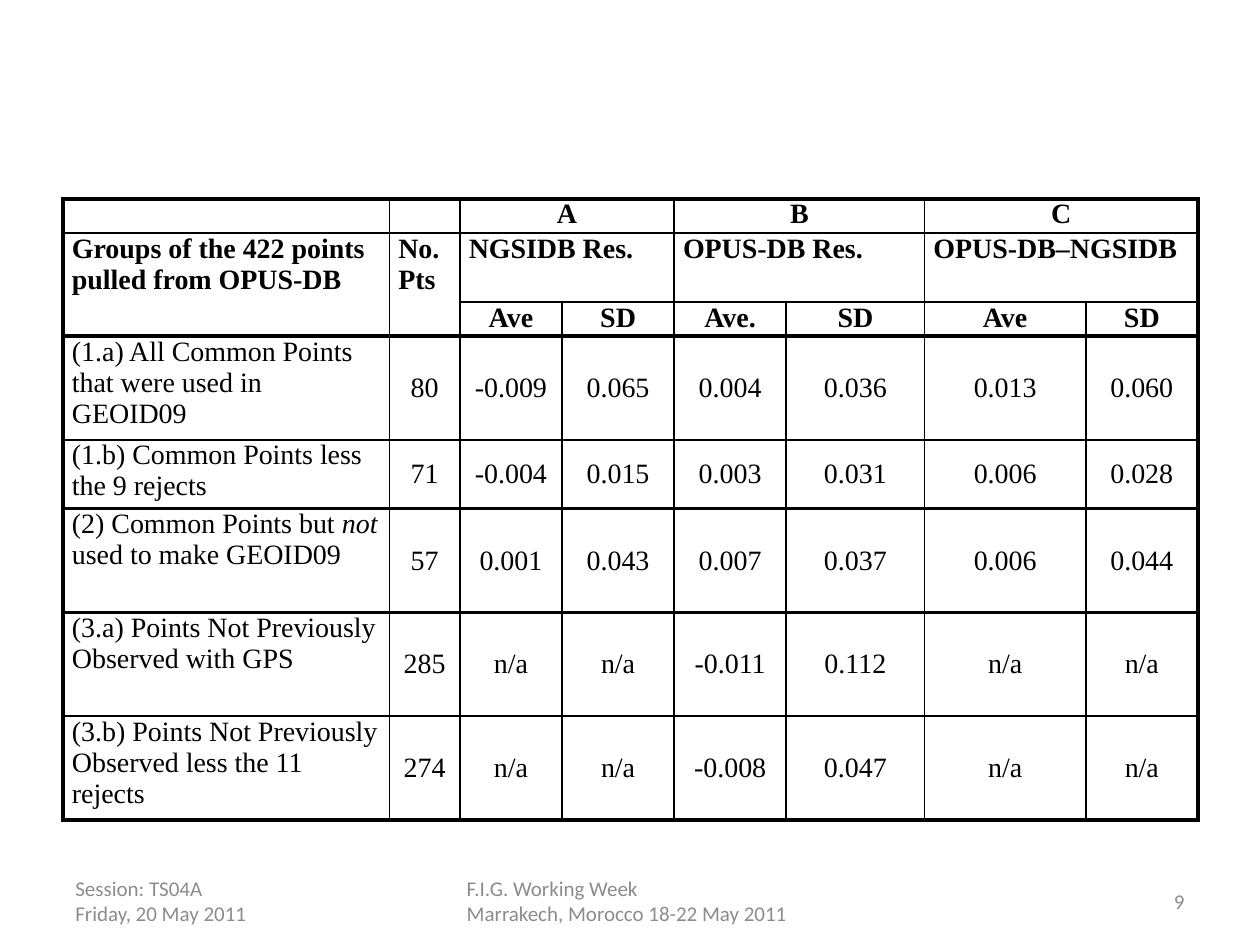
from dataclasses import dataclass

from lxml.etree import SubElement
from pptx import Presentation
from pptx.dml.color import RGBColor
from pptx.enum.text import MSO_ANCHOR as Anchor, PP_ALIGN as Align
from pptx.oxml.ns import qn
from pptx.util import Cm, Pt


@dataclass(frozen=True)
class Theme:
    ink: str = "000000"
    muted: str = "8C8C8C"
    table_font: str = "Times New Roman"
    footer_font: str = "Calibri"
    table_size: int = 16
    footer_size: int = 12
    thin: float = 1
    heavy: float = 2.25


COLUMN_WIDTHS = [6.58, 1.42, 2.06, 2.26, 2.26, 2.79, 3.25, 2.26]
ROW_HEIGHTS = [0.69, 1.39, 0.69, 2.09, 1.39, 2.09, 2.09, 2.09]
HEAVY_COLUMN_EDGES = {0, 8}
HEAVY_ROW_EDGES = {0, 3, 5, 6, 8}
HEADER_ROWS = 3

# First row, first column, last row, last column
MERGES = [(row, column, row, column + 1) for row in (0, 1) for column in (2, 4, 6)]
MERGES += [(1, column, 2, column) for column in (0, 1)]

# A cell is a string, or a list of runs of which every second one is italic
ROWS = [
    ["", "", "A", "", "B", "", "C", ""],
    ["Groups of the 422 points pulled from OPUS-DB", "No. Pts",
     "NGSIDB Res.", "", "OPUS-DB Res.", "", "OPUS-DB–NGSIDB", ""],
    ["", "", "Ave", "SD", "Ave.", "SD", "Ave", "SD"],
    ["(1.a) All Common Points that were used in GEOID09",
     "80", "-0.009", "0.065", "0.004", "0.036", "0.013", "0.060"],
    ["(1.b) Common Points less the 9 rejects",
     "71", "-0.004", "0.015", "0.003", "0.031", "0.006", "0.028"],
    [["(2) Common Points but ", "not", " used to make GEOID09"],
     "57", "0.001", "0.043", "0.007", "0.037", "0.006", "0.044"],
    ["(3.a) Points Not Previously Observed with GPS",
     "285", "n/a", "n/a", "-0.011", "0.112", "n/a", "n/a"],
    ["(3.b) Points Not Previously Observed less the 11 rejects",
     "274", "n/a", "n/a", "-0.008", "0.047", "n/a", "n/a"],
]


class SlideBuilder:
    def __init__(self, slide, theme):
        self.slide = slide
        self.theme = theme

    def style(self, paragraph, name, size, color, align, bold=False):
        paragraph.alignment = align
        font = paragraph.font
        font.name, font.size, font.bold = name, Pt(size), bold
        font.color.rgb = RGBColor.from_string(color)

    def footer(self, lines, left, width, align=Align.LEFT, inset=0.25):
        box = self.slide.shapes.add_textbox(Cm(left), Cm(17.65), Cm(width), Cm(1.02))
        frame = box.text_frame
        frame.word_wrap = True
        frame.vertical_anchor = Anchor.MIDDLE
        frame.margin_left = Cm(inset)
        frame.text = "\n".join(lines)
        for paragraph in frame.paragraphs:
            self.style(paragraph, self.theme.footer_font, self.theme.footer_size,
                       self.theme.muted, align)

    def border(self, cell, side, heavy):
        width = self.theme.heavy if heavy else self.theme.thin
        properties = cell._tc.get_or_add_tcPr()
        line = SubElement(properties, qn(f"a:ln{side}"), w=str(Pt(width)))
        fill = SubElement(line, qn("a:solidFill"))
        SubElement(fill, qn("a:srgbClr"), val=self.theme.ink)

    def cell(self, cell, content, row, column):
        # Ruled edges, following the merged extent
        right, bottom = column + cell.span_width, row + cell.span_height
        self.border(cell, "L", column in HEAVY_COLUMN_EDGES)
        self.border(cell, "R", right in HEAVY_COLUMN_EDGES)
        self.border(cell, "T", row in HEAVY_ROW_EDGES)
        self.border(cell, "B", bottom in HEAVY_ROW_EDGES)
        cell.fill.background()

        # Text
        cell.margin_left = cell.margin_right = Cm(0.18)
        cell.margin_top = cell.margin_bottom = 0
        header = row < HEADER_ROWS
        centred = column > 0 and row != 1
        cell.vertical_anchor = Anchor.MIDDLE if centred and not header else Anchor.TOP
        paragraph = cell.text_frame.paragraphs[0]
        self.style(paragraph, self.theme.table_font, self.theme.table_size,
                   self.theme.ink, Align.CENTER if centred else Align.LEFT, header)
        runs = [content] if isinstance(content, str) else content
        for index, text in enumerate(runs):
            if text:
                run = paragraph.add_run()
                run.text = text
                if index % 2:
                    run.font.italic = True
        # Keeps empty cells from stretching their row
        SubElement(paragraph._p, qn("a:endParaRPr"), sz=str(self.theme.table_size * 100))

    def table(self, left, top):
        frame = self.slide.shapes.add_table(
            len(ROWS), len(COLUMN_WIDTHS), Cm(left), Cm(top),
            Cm(sum(COLUMN_WIDTHS)), Cm(sum(ROW_HEIGHTS)))
        table = frame.table
        table.first_row = table.horz_banding = False
        for column, width in zip(table.columns, COLUMN_WIDTHS):
            column.width = Cm(width)
        for row, height in zip(table.rows, ROW_HEIGHTS):
            row.height = Cm(height)
        for first_row, first_column, last_row, last_column in MERGES:
            table.cell(first_row, first_column).merge(table.cell(last_row, last_column))
        for row, contents in enumerate(ROWS):
            for column, content in enumerate(contents):
                cell = table.cell(row, column)
                if not cell.is_spanned:
                    self.cell(cell, content, row, column)


def main():
    presentation = Presentation()
    presentation.slide_width, presentation.slide_height = Cm(25.4), Cm(19.05)
    slide = presentation.slides.add_slide(presentation.slide_layouts[6])
    builder = SlideBuilder(slide, Theme())

    # Footer: session, event, page number
    builder.footer(["Session: TS04A", "Friday, 20 May 2011"], 1.27, 5.93)
    builder.footer(["F.I.G. Working Week", "Marrakech, Morocco 18-22 May 2011"],
                   8.68, 8.04, inset=0.73)
    builder.footer(["9"], 18.2, 5.93, Align.RIGHT)

    # Residual statistics
    builder.table(1.27, 4.01)

    presentation.save("out.pptx")


if __name__ == "__main__":
    main()
